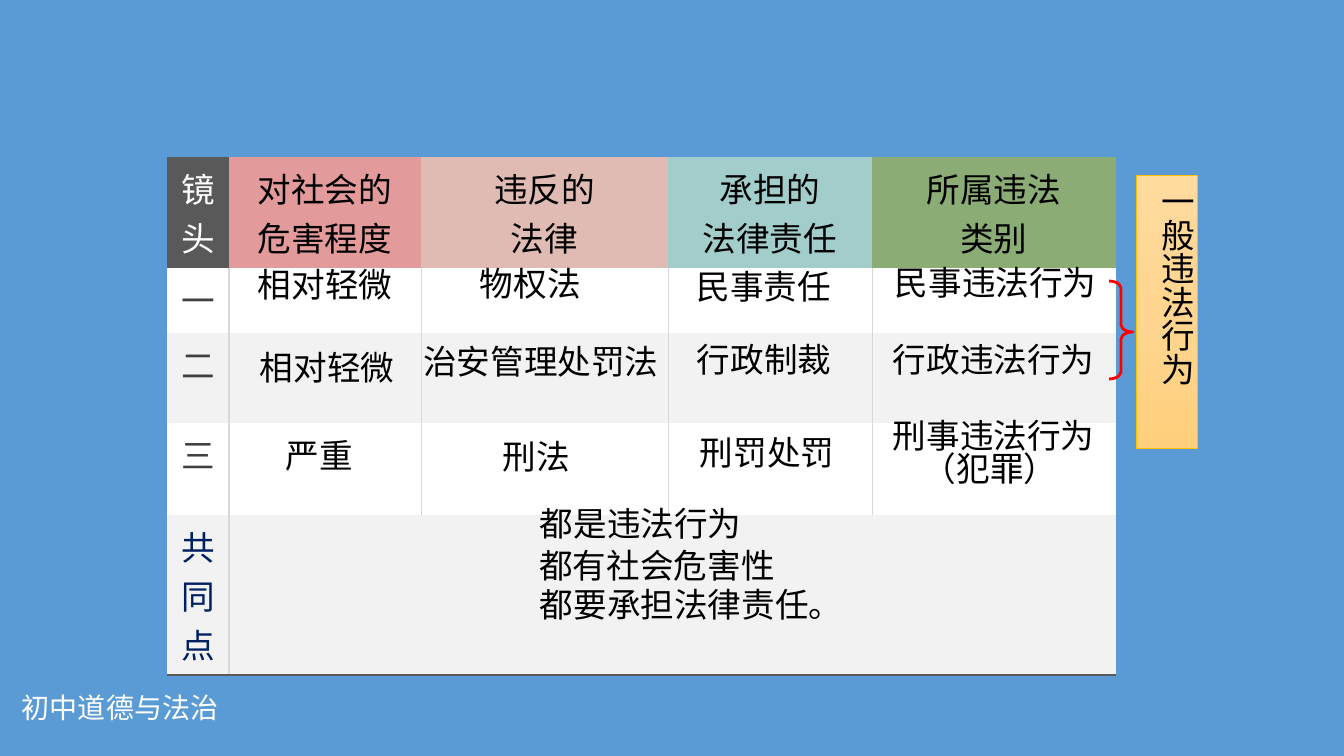
import copy

import lxml.etree
import pptx
import pptx.dml.color
import pptx.enum.shapes
import pptx.enum.text
import pptx.oxml.ns
import pptx.util

RGBColor = pptx.dml.color.RGBColor
ALIGN = pptx.enum.text.PP_ALIGN
ANCHOR = pptx.enum.text.MSO_ANCHOR
AUTO_SIZE = pptx.enum.text.MSO_AUTO_SIZE
SHAPE = pptx.enum.shapes.MSO_SHAPE
qn = pptx.oxml.ns.qn

EMU_PER_PX = 914400 / 100.8
FONT_NAME = "Noto Sans CJK SC"
NO_STYLE_TABLE = "{2D5ABB26-0587-4C30-8999-92F81FD0307C}"

BLUE = RGBColor(0x5B, 0x9B, 0xD5)
WHITE = RGBColor(0xFF, 0xFF, 0xFF)
BLACK = RGBColor(0x00, 0x00, 0x00)
LIGHT_GREY = RGBColor(0xF2, 0xF2, 0xF2)
RULE_GREY = RGBColor(0xD9, 0xD9, 0xD9)
DARK_GREY = RGBColor(0x59, 0x59, 0x59)
LABEL_GREY = RGBColor(0x40, 0x40, 0x40)
NAVY = RGBColor(0x00, 0x20, 0x60)
RED = RGBColor(0xFF, 0x00, 0x00)
GOLD = RGBColor(0xFF, 0xC0, 0x00)
PEACH_STOPS = [
    (0, RGBColor(0xFF, 0xDB, 0x9E)),
    (0.5, RGBColor(0xFF, 0xD5, 0x90)),
    (1, RGBColor(0xFF, 0xD0, 0x7C)),
]

COLUMN_WIDTHS = [62, 192, 247, 204, 244]
ROW_HEIGHTS = [111, 65, 90, 92, 160]
HEADERS = [
    (["镜头"], DARK_GREY, WHITE),
    (["对社会的", "危害程度"], RGBColor(0xE2, 0x9A, 0x9A), BLACK),
    (["违反的", "法律"], RGBColor(0xDF, 0xBB, 0xB3), BLACK),
    (["承担的", "法律责任"], RGBColor(0xA3, 0xCD, 0xCB), BLACK),
    (["所属违法", "类别"], RGBColor(0x8B, 0xAC, 0x74), BLACK),
]
ROW_LABELS = [
    ("一", WHITE, LABEL_GREY),
    ("二", LIGHT_GREY, LABEL_GREY),
    ("三", WHITE, LABEL_GREY),
    ("共同点", LIGHT_GREY, NAVY),
]

TIGHT, LOOSE = 0.82, 1.2
ANSWERS = [
    (["相对轻微"], (248, 261, 156, 50), ALIGN.LEFT, False, TIGHT),
    (["相对轻微"], (250, 344, 156, 50), ALIGN.LEFT, False, TIGHT),
    (["严重"], (276, 432, 89, 50), ALIGN.LEFT, False, TIGHT),
    (["物权法"], (470, 260, 283, 50), ALIGN.LEFT, True, TIGHT),
    (["治安管理处罚法"], (410, 338, 262, 50), ALIGN.CENTER, True, TIGHT),
    (["刑法"], (461, 433, 151, 50), ALIGN.CENTER, True, TIGHT),
    (["民事责任"], (639, 263, 250, 50), ALIGN.CENTER, True, TIGHT),
    (["行政制裁"], (687, 336, 258, 50), ALIGN.LEFT, True, TIGHT),
    (["刑罚处罚"], (690, 429, 244, 50), ALIGN.LEFT, True, TIGHT),
    (["民事违法行为"], (885, 259, 240, 50), ALIGN.LEFT, True, TIGHT),
    (["行政违法行为"], (883, 336, 245, 50), ALIGN.LEFT, True, TIGHT),
    (["刑事违法行为", "（犯罪）"], (883, 412, 316, 91), ALIGN.LEFT, True, TIGHT),
    (["都是违法行为"], (530, 485, 224, 66), ALIGN.LEFT, False, LOOSE),
    (["都有社会危害性"], (528, 527, 258, 68), ALIGN.CENTER, False, LOOSE),
    (["都要承担法律责任。"], (530, 566, 326, 66), ALIGN.LEFT, False, LOOSE),
]


def px(length):
    """Turn a length in px into EMU."""
    return pptx.util.Emu(round(length * EMU_PER_PX))


def apply_format(target, values):
    """Set each named attribute of the target."""
    for name, value in values.items():
        setattr(target, name, value)


def write_lines(frame, lines, color, size=24, **paragraph_format):
    """Write one paragraph per line of text."""
    for index, line in enumerate(lines):
        paragraph = frame.paragraphs[0] if index == 0 else frame.add_paragraph()
        apply_format(paragraph, paragraph_format)
        run = paragraph.add_run()
        run.text = line
        apply_format(run.font, {"name": FONT_NAME, "size": pptx.util.Pt(size)})
        run.font.color.rgb = color
        properties = run.font._element
        lxml.etree.SubElement(properties, qn("a:ea"), typeface=FONT_NAME)


def add_text(slide, box, lines, color, frame_format, **text_format):
    """Add a text box filling the given box."""
    shape = slide.shapes.add_textbox(*map(px, box))
    apply_format(shape.text_frame, frame_format)
    write_lines(shape.text_frame, lines, color, **text_format)
    return shape


def add_border(cell, side, color, width):
    """Draw one border of a table cell."""
    properties = cell._tc.get_or_add_tcPr()
    line = lxml.etree.SubElement(
        properties, qn("a:" + side), w=str(pptx.util.Pt(width))
    )
    fill = lxml.etree.SubElement(line, qn("a:solidFill"))
    lxml.etree.SubElement(fill, qn("a:srgbClr"), val=str(color))


def fill_cell(cell, lines, background, color):
    """Fill a table cell and write its centred lines."""
    cell.fill.solid()
    cell.fill.fore_color.rgb = background
    apply_format(cell, {
        "margin_left": px(13), "margin_right": px(13),
        "margin_top": px(7), "margin_bottom": px(7),
    })
    write_lines(cell.text_frame, lines, color, alignment=ALIGN.CENTER)


def add_comparison_table(slide, box):
    """Add the table comparing the three scenes."""
    frame = slide.shapes.add_table(
        len(ROW_HEIGHTS), len(COLUMN_WIDTHS), *map(px, box)
    )
    table = frame.table
    apply_format(table, {"first_row": False, "horz_banding": False})
    table._tbl.tblPr.find(qn("a:tableStyleId")).text = NO_STYLE_TABLE
    for column, width in zip(table.columns, COLUMN_WIDTHS):
        column.width = px(width)
    for row, height in zip(table.rows, ROW_HEIGHTS):
        row.height = px(height)
    last_row, last_column = len(ROW_HEIGHTS) - 1, len(COLUMN_WIDTHS) - 1
    table.cell(last_row, 1).merge(table.cell(last_row, last_column))
    for index, header in enumerate(HEADERS):
        fill_cell(table.cell(0, index), *header)
    for row, (label, background, color) in enumerate(ROW_LABELS, 1):
        for column in range(len(COLUMN_WIDTHS)):
            cell = table.cell(row, column)
            if column > 0:
                add_border(cell, "lnL", RULE_GREY, 1 if column == 1 else 0.5)
            if column < last_column and (row < last_row or column == 0):
                add_border(cell, "lnR", RULE_GREY, 1 if column == 0 else 0.5)
            if row == last_row:
                add_border(cell, "lnB", DARK_GREY, 1.5)
            fill_cell(cell, [label] if column == 0 else [], background, color)


def add_answers(slide, origin):
    """Add the answers laid over the table."""
    left, top = origin
    for lines, box, alignment, wrap, spacing in ANSWERS:
        placed = (left + box[0], top + box[1], box[2], box[3])
        frame_format = {
            "word_wrap": wrap, "auto_size": AUTO_SIZE.SHAPE_TO_FIT_TEXT,
            "margin_top": px(10), "margin_bottom": 0,
        }
        shape = add_text(slide, placed, lines, BLACK, frame_format,
                         alignment=alignment, line_spacing=spacing)
        for paragraph in shape.text_frame.paragraphs[1:]:
            paragraph._p.get_or_add_pPr().set("marL", str(px(30)))


def add_category_note(slide, box):
    """Add the red brace and the vertical label beside it."""
    left, top, width, height = box
    brace = slide.shapes.add_shape(
        SHAPE.RIGHT_BRACE, px(left), px(top + 106), px(24), px(98)
    )
    brace.shadow.inherit = False
    brace.fill.background()
    brace.line.color.rgb = RED
    brace.line.width = pptx.util.Pt(2)
    brace.adjustments[0], brace.adjustments[1] = 0.3, 0.52

    label = slide.shapes.add_shape(
        SHAPE.RECTANGLE, px(left + 27), px(top), px(width - 27), px(height)
    )
    label.shadow.inherit = False
    label.line.color.rgb = GOLD
    label.line.width = pptx.util.Pt(0.5)
    label.fill.gradient()
    label.fill.gradient_angle = 270
    stop_list = label._element.spPr.find(".//" + qn("a:gsLst"))
    stop_list.append(copy.deepcopy(stop_list[-1]))
    for stop, (position, color) in zip(label.fill.gradient_stops, PEACH_STOPS):
        stop.position = position
        stop.color.rgb = color
    frame = label.text_frame
    apply_format(frame, {
        "word_wrap": True, "vertical_anchor": ANCHOR.TOP, "margin_right": 0,
        "margin_left": px(5), "margin_top": px(10), "margin_bottom": px(10),
    })
    frame._txBody.bodyPr.set("vert", "eaVert")
    write_lines(frame, ["一般违法行为"], BLACK, alignment=ALIGN.LEFT)


def add_footer(slide, box):
    """Add the course name at the bottom left."""
    frame_format = {
        "word_wrap": True, "vertical_anchor": ANCHOR.BOTTOM,
        "margin_bottom": px(2),
    }
    add_text(slide, box, ["初中道德与法治"], WHITE, frame_format,
             size=20, line_spacing=0.9)


def main():
    """Build the slide and save the presentation."""
    presentation = pptx.Presentation()
    apply_format(presentation, {"slide_width": px(1344), "slide_height": px(756)})
    slide = presentation.slides.add_slide(presentation.slide_layouts[6])
    slide.background.fill.solid()
    slide.background.fill.fore_color.rgb = BLUE
    add_footer(slide, (12, 684, 291, 43))
    add_comparison_table(slide, (167, 157, sum(COLUMN_WIDTHS), sum(ROW_HEIGHTS)))
    add_answers(slide, (0, 0))
    add_category_note(slide, (1109, 175, 88, 273))
    presentation.save("out.pptx")


if __name__ == "__main__":
    main()
